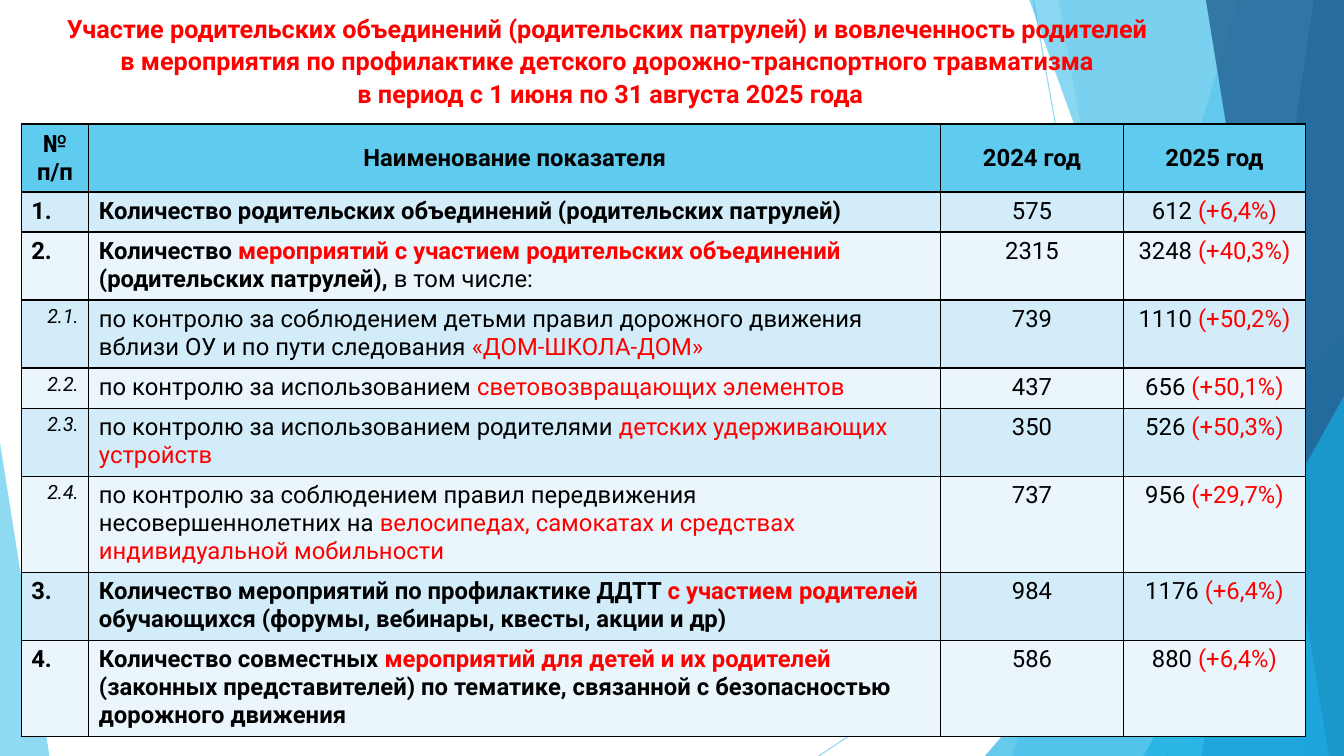
from dataclasses import dataclass

from lxml.etree import SubElement
from pptx import Presentation
from pptx.dml.color import RGBColor
from pptx.enum.shapes import MSO_CONNECTOR as Connector, MSO_SHAPE as Preset
from pptx.enum.text import MSO_ANCHOR as Anchor, MSO_AUTO_SIZE as AutoSize, PP_ALIGN as Align
from pptx.oxml.ns import qn
from pptx.util import Inches, Pt

WIDTH, HEIGHT = Inches(13.33), Inches(7.5)


@dataclass(frozen=True)
class Theme:
    font: str = "Roboto"
    title_size: float = 18
    table_size: float = 17
    subnumber_size: float = 14
    text: str = "000000"
    accent: str = "FF0000"
    header: str = "5FCBEF"
    stripes: tuple[str, str] = ("D2ECF9", "EAF6FC")
    sky: str = "5FCBEF"
    azure: str = "17B0E4"
    blue: str = "2E83C3"
    navy: str = "226292"
    border: str = "000000"


THEME = Theme()


@dataclass(frozen=True)
class Ray:
    start: tuple[float, float]
    end: tuple[float, float]


@dataclass(frozen=True)
class Band:
    top: float
    bottom: float
    color: str
    opacity: int


@dataclass(frozen=True)
class Wedge:
    left: float
    top: float
    width: float
    height: float
    apex: float
    color: str
    opacity: int


@dataclass(frozen=True)
class Indicator:
    number: str
    name: str
    previous: str
    current: str
    lines: int
    note: str = ""

    @property
    def is_main(self) -> bool:
        return self.number.count(".") == 1


BACKDROP = (
    Ray((76.89, 0), (86.87, 100)),
    Ray((100, 53.73), (60.92, 100)),
    Band(92.12, 75.32, THEME.sky, 36),
    Band(78.77, 88.75, THEME.sky, 20),
    Wedge(73.29, 44.4, 26.71, 55.6, 1, THEME.azure, 66),
    Band(76.59, 96.85, THEME.azure, 50),
    Band(97.75, 89.42, THEME.blue, 70),
    Band(89.72, 98.87, THEME.navy, 80),
    Wedge(85.07, 52.4, 14.93, 47.6, 1, THEME.azure, 66),
    Wedge(0, 58.53, 3.68, 41.47, 0, THEME.sky, 70),
)
TITLE = (
    "Участие родительских объединений (родительских патрулей) и вовлеченность родителей ",
    "в мероприятия по профилактике детского дорожно-транспортного травматизма ",
    "в период с 1 июня по 31 августа 2025 года",
)
HEADERS = ("№ п/п", "Наименование показателя", "2024 год", "2025 год")
COLUMNS = (5.03, 63.39, 13.58, 13.58)
ROW_PADDING, LINE_HEIGHT = 1.6, 3.7
INDICATORS = (
    Indicator("1.", "Количество родительских объединений (родительских патрулей)",
              "575", "612 |(+6,4%)", 1),
    Indicator("2.", "Количество |мероприятий с участием родительских объединений |(родительских патрулей), ",
              "2315", "3248 |(+40,3%)", 2, "в том числе:"),
    Indicator("2.1.", "по контролю за соблюдением детьми правил дорожного движения вблизи ОУ "
              "и по пути следования |«ДОМ-ШКОЛА-ДОМ»", "739", "1110 |(+50,2%)", 2),
    Indicator("2.2.", "по контролю за использованием |световозвращающих элементов",
              "437", "656 |(+50,1%)", 1),
    Indicator("2.3.", "по контролю за использованием родителями |детских удерживающих устройств",
              "350", "526 |(+50,3%)", 2),
    Indicator("2.4.", "по контролю за соблюдением правил передвижения несовершеннолетних на "
              "|велосипедах, самокатах и средствах индивидуальной мобильности",
              "737", "956 |(+29,7%)", 3),
    Indicator("3.", "Количество мероприятий по профилактике ДДТТ |с участием родителей "
              "|обучающихся (форумы, вебинары, квесты, акции и др)", "984", "1176 |(+6,4%)", 2),
    Indicator("4.", "Количество совместных |мероприятий для детей и их родителей "
              "|(законных представителей) по тематике, связанной с безопасностью дорожного движения",
              "586", "880 |(+6,4%)", 3),
)


def across(percent: float) -> int:
    return round(WIDTH * percent / 100)


def down(percent: float) -> int:
    return round(HEIGHT * percent / 100)


def add_text(paragraph, text: str, *, size: float = THEME.table_size, color: str = THEME.text,
             bold: bool = False, italic: bool = False, align: Align = Align.LEFT) -> None:
    paragraph.alignment = align
    for index, part in enumerate(text.split("|")):
        run = paragraph.add_run()
        run.text = part
        font = run.font
        font.name, font.size, font.bold, font.italic = THEME.font, Pt(size), bold, italic
        font.color.rgb = RGBColor.from_string(THEME.accent if index % 2 else color)


def set_opacity(element, percent: int) -> None:
    for color in element.iter(qn("a:srgbClr")):
        SubElement(color, qn("a:alpha"), val=str(percent * 1000))


def paint(shape, color: str, opacity: int) -> None:
    shape.shadow.inherit = False
    shape.fill.solid()
    shape.fill.fore_color.rgb = RGBColor.from_string(color)
    shape.line.fill.background()
    set_opacity(shape.element, opacity)


def draw_ray(shapes, ray: Ray) -> None:
    (left, top), (right, bottom) = ray.start, ray.end
    connector = shapes.add_connector(Connector.STRAIGHT, across(left), down(top),
                                     across(right), down(bottom))
    connector.line.width = Pt(0.75)
    connector.line.color.rgb = RGBColor.from_string(THEME.sky)
    set_opacity(connector.element, 70)
    SubElement(connector.element.spPr, qn("a:effectLst"))


def draw_band(shapes, band: Band) -> None:
    builder = shapes.build_freeform(across(band.top), 0)
    builder.add_line_segments([(WIDTH, 0), (WIDTH, HEIGHT), (across(band.bottom), HEIGHT)])
    paint(builder.convert_to_shape(), band.color, band.opacity)


def draw_wedge(shapes, wedge: Wedge) -> None:
    shape = shapes.add_shape(Preset.ISOSCELES_TRIANGLE, across(wedge.left), down(wedge.top),
                             across(wedge.width), down(wedge.height))
    shape.adjustments[0] = wedge.apex
    paint(shape, wedge.color, wedge.opacity)


def draw_title(title) -> None:
    title.element.getparent().append(title.element)
    title.left, title.top = across(1.58), down(0.8)
    title.width, title.height = across(90.02), down(14)
    frame = title.text_frame
    frame.word_wrap, frame.auto_size = True, AutoSize.SHAPE_TO_FIT_TEXT
    frame.vertical_anchor, frame.margin_right = Anchor.TOP, across(3.1)
    for index, line in enumerate(TITLE):
        paragraph = frame.add_paragraph() if index else frame.paragraphs[0]
        paragraph.line_spacing = 1.07
        add_text(paragraph, line, size=THEME.title_size, color=THEME.accent, bold=True,
                 align=Align.CENTER)


def style_cell(cell, color: str) -> None:
    properties = cell._tc.get_or_add_tcPr()
    for side in ("L", "R", "T", "B"):
        border = SubElement(properties, qn(f"a:ln{side}"), w=str(Pt(1)))
        SubElement(SubElement(border, qn("a:solidFill")), qn("a:srgbClr"), val=THEME.border)
    cell.fill.solid()
    cell.fill.fore_color.rgb = RGBColor.from_string(color)


def draw_table(shapes) -> None:
    heights = [down(ROW_PADDING + LINE_HEIGHT * lines)
               for lines in (2, *(indicator.lines for indicator in INDICATORS))]
    table = shapes.add_table(len(heights), len(COLUMNS), across(1.58), down(16.4),
                             across(sum(COLUMNS)), sum(heights)).table
    table.first_row = table.horz_banding = False
    for column, width in zip(table.columns, COLUMNS):
        column.width = across(width)
    for index, (row, height) in enumerate(zip(table.rows, heights)):
        row.height = height
        for cell in row.cells:
            style_cell(cell, THEME.stripes[(index - 1) % 2] if index else THEME.header)
    for column, header in enumerate(HEADERS):
        cell = table.cell(0, column)
        cell.vertical_anchor = Anchor.MIDDLE
        add_text(cell.text_frame.paragraphs[0], header, bold=True, align=Align.CENTER)
    for index, indicator in enumerate(INDICATORS, 1):
        number, name, previous, current = (
            table.cell(index, column).text_frame.paragraphs[0] for column in range(len(COLUMNS)))
        main = indicator.is_main
        add_text(number, indicator.number, bold=main, italic=not main,
                 size=THEME.table_size if main else THEME.subnumber_size,
                 align=Align.LEFT if main else Align.RIGHT)
        add_text(name, indicator.name, bold=main)
        if indicator.note:
            add_text(name, indicator.note)
        add_text(previous, indicator.previous, align=Align.CENTER)
        add_text(current, indicator.current, align=Align.CENTER)


def main() -> None:
    presentation = Presentation()
    presentation.slide_width, presentation.slide_height = WIDTH, HEIGHT
    slide = presentation.slides.add_slide(presentation.slide_layouts[5])
    painters = {Ray: draw_ray, Band: draw_band, Wedge: draw_wedge}
    for item in BACKDROP:
        painters[type(item)](slide.shapes, item)
    draw_title(slide.shapes.title)
    draw_table(slide.shapes)
    presentation.save("out.pptx")


if __name__ == "__main__":
    main()
